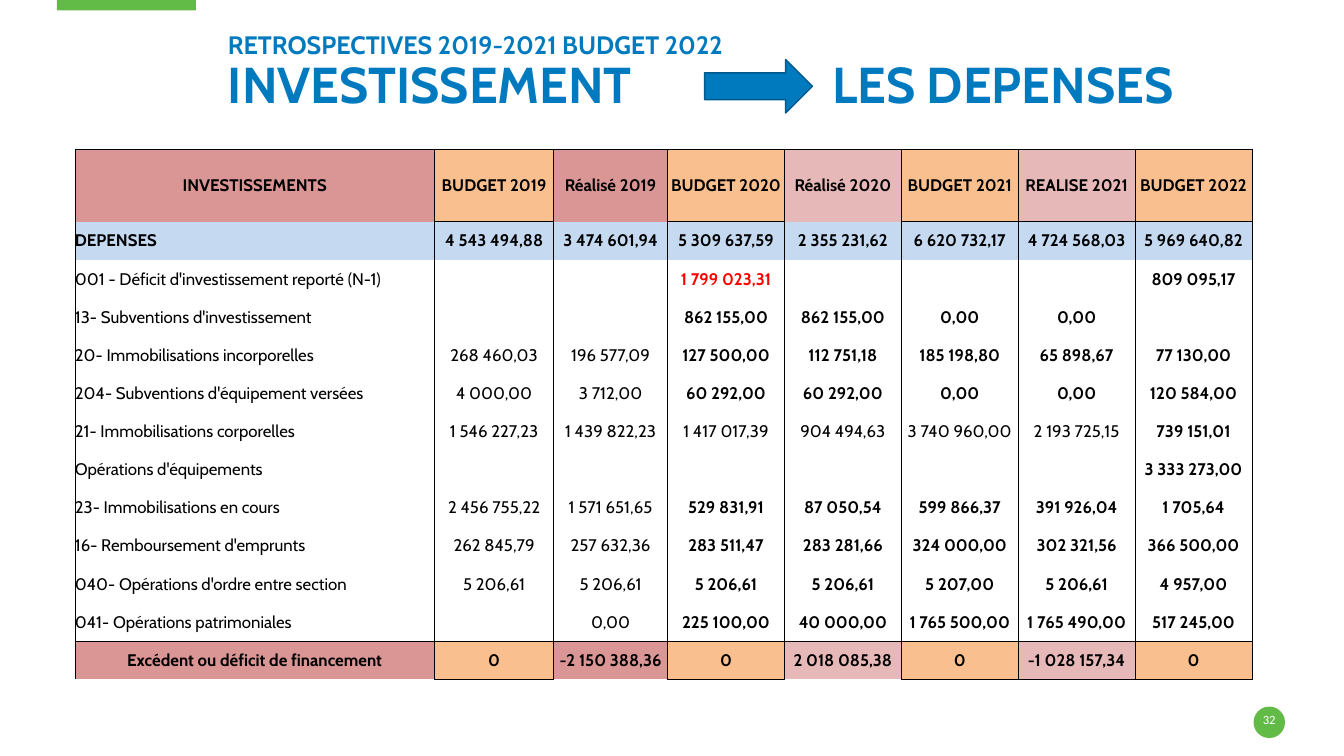
from lxml.etree import SubElement
from pptx import Presentation
from pptx.dml.color import RGBColor
from pptx.enum.shapes import MSO_SHAPE
from pptx.enum.text import MSO_ANCHOR, PP_ALIGN
from pptx.oxml.ns import qn
from pptx.util import Pt

BLUE, GREEN, WHITE, BLACK, RED = "007ABF", "62BB46", "FFFFFF", "000000", "FF0000"
ROSE, PINK, ORANGE, SKY = "DA9694", "E6B8B7", "FABF8F", "C5D9F1"

COLUMN_WIDTHS = [257, 85, 81.4] + [83.5] * 5
COLUMN_FILLS = [ROSE, ORANGE, ROSE, ORANGE, PINK, ORANGE, PINK, ORANGE]
BOXED_COLUMNS = {1, 3, 5, 6, 7}  # header and total cells closed at the bottom
HEADER_HEIGHT, ROW_HEIGHT = 51.8, 27.25
REGULAR_ROW = "21- Immobilisations corporelles"  # light up to the last column
DEFICIT = "1 799 023,31"

ROWS = [
    ["INVESTISSEMENTS", "BUDGET 2019", "Réalisé 2019", "BUDGET 2020",
     "Réalisé 2020", "BUDGET 2021", "REALISE 2021", "BUDGET 2022"],
    ["DEPENSES", "4 543 494,88", "3 474 601,94", "5 309 637,59",
     "2 355 231,62", "6 620 732,17", "4 724 568,03", "5 969 640,82"],
    ["001 - Déficit d'investissement reporté (N-1)", "", "", DEFICIT,
     "", "", "", "809 095,17"],
    ["13- Subventions d'investissement", "", "", "862 155,00",
     "862 155,00", "0,00", "0,00", ""],
    ["20- Immobilisations incorporelles", "268 460,03", "196 577,09", "127 500,00",
     "112 751,18", "185 198,80", "65 898,67", "77 130,00"],
    ["204- Subventions d'équipement versées", "4 000,00", "3 712,00", "60 292,00",
     "60 292,00", "0,00", "0,00", "120 584,00"],
    [REGULAR_ROW, "1 546 227,23", "1 439 822,23", "1 417 017,39",
     "904 494,63", "3 740 960,00", "2 193 725,15", "739 151,01"],
    ["Opérations d'équipements", "", "", "", "", "", "", "3 333 273,00"],
    ["23- Immobilisations en cours", "2 456 755,22", "1 571 651,65", "529 831,91",
     "87 050,54", "599 866,37", "391 926,04", "1 705,64"],
    ["16- Remboursement d'emprunts", "262 845,79", "257 632,36", "283 511,47",
     "283 281,66", "324 000,00", "302 321,56", "366 500,00"],
    ["040- Opérations d'ordre entre section", "5 206,61", "5 206,61", "5 206,61",
     "5 206,61", "5 207,00", "5 206,61", "4 957,00"],
    ["041- Opérations patrimoniales", "", "0,00", "225 100,00",
     "40 000,00", "1 765 500,00", "1 765 490,00", "517 245,00"],
    ["Excédent ou déficit de financement", "0", "-2 150 388,36", "0",
     "2 018 085,38", "0", "-1 028 157,34", "0"],
]
TOTAL = len(ROWS) - 1


def color(value):
    return RGBColor.from_string(value)


def add_span(para, text, size, tint, bold=False, font="Cabin"):
    span = para.add_run()
    span.text = text
    span.font.name, span.font.size, span.font.bold = font, Pt(size), bold
    span.font.color.rgb = color(tint)


def add_text_box(page, left, top, width, height, anchor):
    frame = page.shapes.add_textbox(Pt(left), Pt(top), Pt(width), Pt(height)).text_frame
    frame.word_wrap = True
    frame.vertical_anchor = anchor
    frame.margin_left = frame.margin_top = frame.margin_right = frame.margin_bottom = 0
    return frame.paragraphs[0]


def add_block(page, kind, left, top, width, height, fill, line=None):
    block = page.shapes.add_shape(kind, Pt(left), Pt(top), Pt(width), Pt(height))
    block.shadow.inherit = False
    block.fill.solid()
    block.fill.fore_color.rgb = color(fill)
    if line:
        block.line.color.rgb = color(line)
        block.line.width = Pt(1)
    else:
        block.line.fill.background()


def set_borders(cell, sides):
    properties = cell._tc.get_or_add_tcPr()
    for side in "LRTB":
        line = SubElement(properties, qn(f"a:ln{side}"), w=str(Pt(0.5)))
        if side in sides:
            fill = SubElement(line, qn("a:solidFill"))
            SubElement(fill, qn("a:srgbClr"), val=BLACK)
        else:
            SubElement(line, qn("a:noFill"))


def border_sides(row, column):
    sides = "LR"
    boxed = column in BOXED_COLUMNS
    if row in (0, TOTAL) or (row == 1 and boxed):
        sides += "T"
    if row == TOTAL - 1 or (row in (0, TOTAL) and boxed):
        sides += "B"
    return sides


def is_bold(row, column):
    if row in (0, 1, TOTAL):
        return True
    return column >= (7 if ROWS[row][0] == REGULAR_ROW else 3)


def fill_cell(cell, row, column):
    cell.margin_left = cell.margin_right = cell.margin_top = cell.margin_bottom = 0
    cell.vertical_anchor = MSO_ANCHOR.MIDDLE
    set_borders(cell, border_sides(row, column))
    if row in (0, 1, TOTAL):
        cell.fill.solid()
        cell.fill.fore_color.rgb = color(SKY if row == 1 else COLUMN_FILLS[column])
    else:
        cell.fill.background()
    para = cell.text_frame.paragraphs[0]
    centered = column > 0 or row in (0, TOTAL)
    para.alignment = PP_ALIGN.CENTER if centered else PP_ALIGN.LEFT
    para.font.size = Pt(12)
    text = ROWS[row][column]
    if text:
        add_span(para, text, 12, RED if text == DEFICIT else BLACK, is_bold(row, column))


def add_heading(page, left, top, width, height):
    para = add_text_box(page, left, top, width, height, MSO_ANCHOR.BOTTOM)
    para.line_spacing = 0.9
    # Tab stop where the second half of the title starts
    stops = SubElement(para._p.get_or_add_pPr(), qn("a:tabLst"))
    SubElement(stops, qn("a:tab"), pos=str(Pt(432)), algn="l")
    add_span(para, "RETROSPECTIVES 2019-2021 BUDGET 2022", 18, BLUE, True)
    para.add_line_break()
    add_span(para, "INVESTISSEMENT\tLES DEPENSES", 36, BLUE, True)
    # Arrow between the two halves
    add_block(page, MSO_SHAPE.RIGHT_ARROW, left + 340.6, top + 25.2, 77, 38.2, BLUE, "005A8D")


def add_budget_table(page, left, top):
    width = sum(COLUMN_WIDTHS)
    height = HEADER_HEIGHT + TOTAL * ROW_HEIGHT
    table = page.shapes.add_table(len(ROWS), len(COLUMN_WIDTHS), Pt(left), Pt(top),
                                  Pt(width), Pt(height)).table
    table.first_row = table.horz_banding = False
    for column, column_width in enumerate(COLUMN_WIDTHS):
        table.columns[column].width = Pt(column_width)
    for row in range(len(ROWS)):
        table.rows[row].height = Pt(ROW_HEIGHT if row else HEADER_HEIGHT)
        for column in range(len(COLUMN_WIDTHS)):
            fill_cell(table.cell(row, column), row, column)


def add_page_number(page, left, top, size):
    add_block(page, MSO_SHAPE.OVAL, left, top, size, size, GREEN)
    para = add_text_box(page, left, top + 3.6, size, 14.4, MSO_ANCHOR.TOP)
    para.alignment = PP_ALIGN.CENTER
    add_span(para, "32", 9, WHITE, font="Calibri")


def main():
    deck = Presentation()
    deck.slide_width, deck.slide_height = Pt(960), Pt(540)
    page = deck.slides.add_slide(deck.slide_layouts[6])
    # Green tab at the top edge
    add_block(page, MSO_SHAPE.RECTANGLE, 40.6, -1.4, 99.4, 8.8, GREEN)
    add_heading(page, 162.7, 17.3, 783.4, 64.1)
    add_budget_table(page, 53.5, 106.6)
    add_page_number(page, 895.4, 504.7, 22.5)
    deck.save("out.pptx")


if __name__ == "__main__":
    main()
